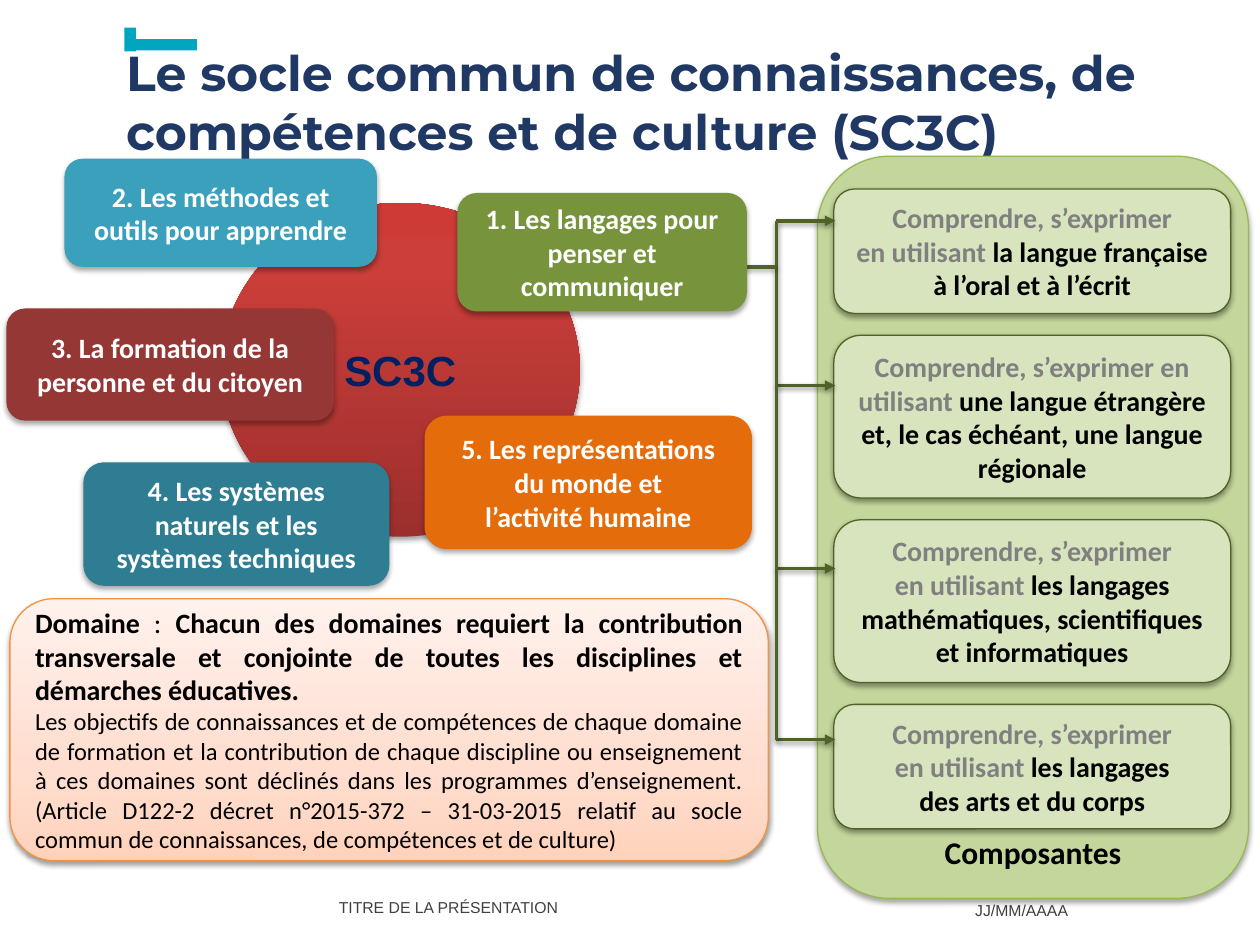
"""Build the slide on the SC3C common core, its five domains and their components."""
from lxml import etree
from pptx import Presentation
from pptx.dml.color import RGBColor
from pptx.enum.shapes import MSO_CONNECTOR, MSO_SHAPE
from pptx.enum.text import MSO_ANCHOR, MSO_AUTO_SIZE, PP_ALIGN
from pptx.oxml.ns import qn
from pptx.util import Cm, Pt

RECTANGLE, ROUNDED, OVAL = MSO_SHAPE.RECTANGLE, MSO_SHAPE.ROUNDED_RECTANGLE, MSO_SHAPE.OVAL
STRAIGHT = MSO_CONNECTOR.STRAIGHT
MIDDLE, BOTTOM = MSO_ANCHOR.MIDDLE, MSO_ANCHOR.BOTTOM
LEFT, CENTER, JUSTIFY = PP_ALIGN.LEFT, PP_ALIGN.CENTER, PP_ALIGN.JUSTIFY
NO_AUTOFIT = MSO_AUTO_SIZE.NONE

BLACK = RGBColor(0x00, 0x00, 0x00)
WHITE = RGBColor(0xFF, 0xFF, 0xFF)
GREY = RGBColor(0x80, 0x80, 0x80)
DARK_GREY = RGBColor(0x40, 0x40, 0x40)
TITLE_BLUE = RGBColor(0x20, 0x38, 0x64)
NAVY = RGBColor(0x00, 0x20, 0x60)
TURQUOISE = RGBColor(0x00, 0xA6, 0xBE)
ORANGE_LINE = RGBColor(0xF5, 0x92, 0x40)
PANEL_GREEN = RGBColor(0xC3, 0xD6, 0x9B)
PANEL_LINE = RGBColor(0x98, 0xB8, 0x55)
PALE_GREEN = RGBColor(0xD7, 0xE4, 0xBD)
DARK_GREEN = RGBColor(0x4F, 0x62, 0x28)
GREEN = RGBColor(0x77, 0x93, 0x3C)
BLUE = RGBColor(0x3B, 0xA0, 0xBB)
RED = RGBColor(0x95, 0x37, 0x35)
TEAL = RGBColor(0x2E, 0x7D, 0x92)
ORANGE = RGBColor(0xE4, 0x6C, 0x0A)
PEACH_GRADIENT = [
    (0, RGBColor(0xFF, 0xD2, 0xBC)),
    (35, RGBColor(0xFF, 0xDE, 0xD0)),
    (100, RGBColor(0xFF, 0xF1, 0xEC)),
]
RED_GRADIENT = [
    (0, RGBColor(0x9C, 0x2F, 0x2D)),
    (80, RGBColor(0xCB, 0x3E, 0x3A)),
    (100, RGBColor(0xCE, 0x3B, 0x37)),
]

DOMAINS = [
    ("4. Les systèmes naturels et les systèmes techniques", TEAL, (1.68, 9.32, 6.17, 2.49)),
    ("3. La formation de la personne et du citoyen", RED, (0.13, 6.22, 6.6, 2.26)),
    ("2. Les méthodes et outils pour apprendre", BLUE, (1.3, 3.2, 6.3, 2.18)),
    ("5. Les représentations du monde et\nl’activité humaine", ORANGE, (8.56, 8.38, 6.6, 2.69)),
    ("1. Les langages pour penser et communiquer", GREEN, (9.22, 3.89, 5.84, 2.39)),
]
COMPONENTS = [
    ("Comprendre, s’exprimer\nen utilisant ", "la langue française à l’oral et à l’écrit", 2.51),
    ("Comprendre, s’exprimer en utilisant ",
     "une langue étrangère et, le cas échéant, une langue régionale", 3.28),
    ("Comprendre, s’exprimer\nen utilisant ",
     "les langages mathématiques, scientifiques et informatiques", 3.28),
    ("Comprendre, s’exprimer\nen utilisant ", "les langages\ndes arts et du corps", 2.51),
]
COMPONENT_TOP, COMPONENT_GAP = 3.81, 0.44
ARROW_HEIGHTS = [4.45, 7.77, 11.46, 14.91]
TRUNK_X, ARROW_END_X = 15.65, 16.84


def add_run(paragraph, text, size, color, bold=True, font="Calibri"):
    """Add text to a paragraph, turning each newline into a line break."""
    for number, line in enumerate(text.split("\n")):
        if number:
            paragraph.add_line_break()
        run = paragraph.add_run()
        run.text = line
        run.font.name = font
        run.font.size = Pt(size)
        run.font.bold = bold
        run.font.color.rgb = color


def add_shadow(shape, opacity=38, distance=1.6):
    """Give a shape or connector a soft shadow below it."""
    effects = etree.SubElement(shape._element.spPr, qn("a:effectLst"))
    shadow = etree.SubElement(effects, qn("a:outerShdw"), blurRad=str(Pt(3.1)),
                              dist=str(Pt(distance)), dir="5400000", rotWithShape="0")
    color = etree.SubElement(shadow, qn("a:srgbClr"), val=str(BLACK))
    etree.SubElement(color, qn("a:alpha"), val=str(opacity * 1000))


def fill_gradient(shape, stops):
    """Fill a shape with a gradient that rises from bottom to top."""
    shape.fill.gradient()
    shape.fill.gradient_angle = 90
    stop_list = shape._element.spPr.find(qn("a:gradFill")).find(qn("a:gsLst"))
    stop_list.clear()
    for position, color in stops:
        stop = etree.SubElement(stop_list, qn("a:gs"), pos=str(position * 1000))
        etree.SubElement(stop, qn("a:srgbClr"), val=str(color))


def add_box(slide, kind, place, fill, line=None, anchor=MIDDLE):
    """Add a filled shape whose text wraps, and return it."""
    shape = slide.shapes.add_shape(kind, *map(Cm, place))
    if isinstance(fill, list):
        fill_gradient(shape, fill)
    else:
        shape.fill.solid()
        shape.fill.fore_color.rgb = fill
    if line is None:
        shape.line.fill.background()
    else:
        shape.line.color.rgb = line
        shape.line.width = Pt(0.75)
    shape.text_frame.word_wrap = True
    shape.text_frame.vertical_anchor = anchor
    shape.text_frame.paragraphs[0].alignment = CENTER
    return shape


def add_link(slide, start, end, arrow=False):
    """Add a green connector between two points."""
    link = slide.shapes.add_connector(STRAIGHT, *map(Cm, start + end))
    link.line.color.rgb = DARK_GREEN
    link.line.width = Pt(2)
    if arrow:
        etree.SubElement(link.line._get_or_add_ln(), qn("a:tailEnd"), type="triangle")
    add_shadow(link)


def add_footer(slide, text, place):
    """Add one small grey line at the foot of the slide."""
    frame = slide.shapes.add_textbox(*map(Cm, place)).text_frame
    frame.word_wrap = True
    frame.vertical_anchor = MIDDLE
    add_run(frame.paragraphs[0], text, 9, DARK_GREY, False, "Arial")


def format_title(slide):
    """Place the title and add the turquoise corner above it."""
    title = slide.shapes.title
    title.left, title.top, title.width, title.height = map(Cm, (2.29, 0.97, 22.96, 2.16))
    frame = title.text_frame
    frame.word_wrap = True
    frame.auto_size = NO_AUTOFIT
    frame.vertical_anchor = MIDDLE
    frame.paragraphs[0].alignment = LEFT
    add_run(frame.paragraphs[0],
            "Le socle commun de connaissances, de compétences et de culture (SC3C)",
            28, TITLE_BLUE, font="Montserrat")
    for place in ((2.51, 0.56, 0.23, 0.48), (2.62, 0.79, 1.35, 0.23)):
        add_box(slide, RECTANGLE, place, TURQUOISE).shadow.inherit = False


def add_definition(slide):
    """Add the box that explains what a domain is."""
    box = add_box(slide, ROUNDED, (0.2, 12.07, 15.29, 5.28), PEACH_GRADIENT, ORANGE_LINE)
    add_shadow(box)
    heading = box.text_frame.paragraphs[0]
    add_run(heading, "Domaine", 16, BLACK)
    add_run(heading, " : ", 16, BLACK, False)
    add_run(heading, "Chacun des domaines requiert la contribution transversale et conjointe "
            "de toutes les disciplines et démarches éducatives.", 16, BLACK)
    detail = box.text_frame.add_paragraph()
    add_run(detail, "Les objectifs de connaissances et de compétences de chaque domaine de "
            "formation et la contribution de chaque discipline ou enseignement à ces domaines "
            "sont déclinés dans les programmes d’enseignement. (Article D122-2 décret "
            "n°2015-372 – 31-03-2015 relatif au socle commun de connaissances, de compétences "
            "et de culture)", 14, BLACK, False)
    heading.alignment = detail.alignment = JUSTIFY


def add_components(slide):
    """Add the green panel, its four components and the arrows that reach them."""
    panel = add_box(slide, ROUNDED, (16.48, 3.15, 8.69, 14.96), PANEL_GREEN, PANEL_LINE, BOTTOM)
    add_shadow(panel, 35, 1.8)
    add_run(panel.text_frame.paragraphs[0], "Composantes", 18, BLACK)
    top = COMPONENT_TOP
    for opening, subject, height in COMPONENTS:
        box = add_box(slide, ROUNDED, (16.81, top, 8, height), PALE_GREEN, DARK_GREEN)
        add_shadow(box)
        add_run(box.text_frame.paragraphs[0], opening, 16, GREY)
        add_run(box.text_frame.paragraphs[0], subject, 16, BLACK)
        top += height + COMPONENT_GAP
    for height in ARROW_HEIGHTS:
        add_link(slide, (TRUNK_X, height), (ARROW_END_X, height), arrow=True)
    add_link(slide, (TRUNK_X, ARROW_HEIGHTS[0]), (TRUNK_X, ARROW_HEIGHTS[-1]))
    add_link(slide, (13.94, 5.38), (TRUNK_X, 5.38))


def add_domains(slide):
    """Add the central disc and the five domains around it."""
    disc = add_box(slide, OVAL, (4.45, 4.09, 7.24, 6.73), RED_GRADIENT)
    add_shadow(disc, 35, 1.8)
    add_run(disc.text_frame.paragraphs[0], "SC3C", 24, NAVY, font="Arial")
    for text, color, place in DOMAINS:
        box = add_box(slide, ROUNDED, place, color)
        add_shadow(box, 35, 1.8)
        add_run(box.text_frame.paragraphs[0], text, 16, WHITE)


def main():
    """Build the slide and save it."""
    presentation = Presentation()
    presentation.slide_width, presentation.slide_height = Cm(25.4), Cm(19.05)
    slide = presentation.slides.add_slide(presentation.slide_layouts[5])
    add_footer(slide, "TITRE DE LA PRÉSENTATION", (6.58, 17.79, 9.86, 1))
    add_footer(slide, "JJ/MM/AAAA", (19.41, 17.84, 3.23, 1))
    format_title(slide)
    add_definition(slide)
    add_components(slide)
    add_domains(slide)
    presentation.save("out.pptx")


if __name__ == "__main__":
    main()
